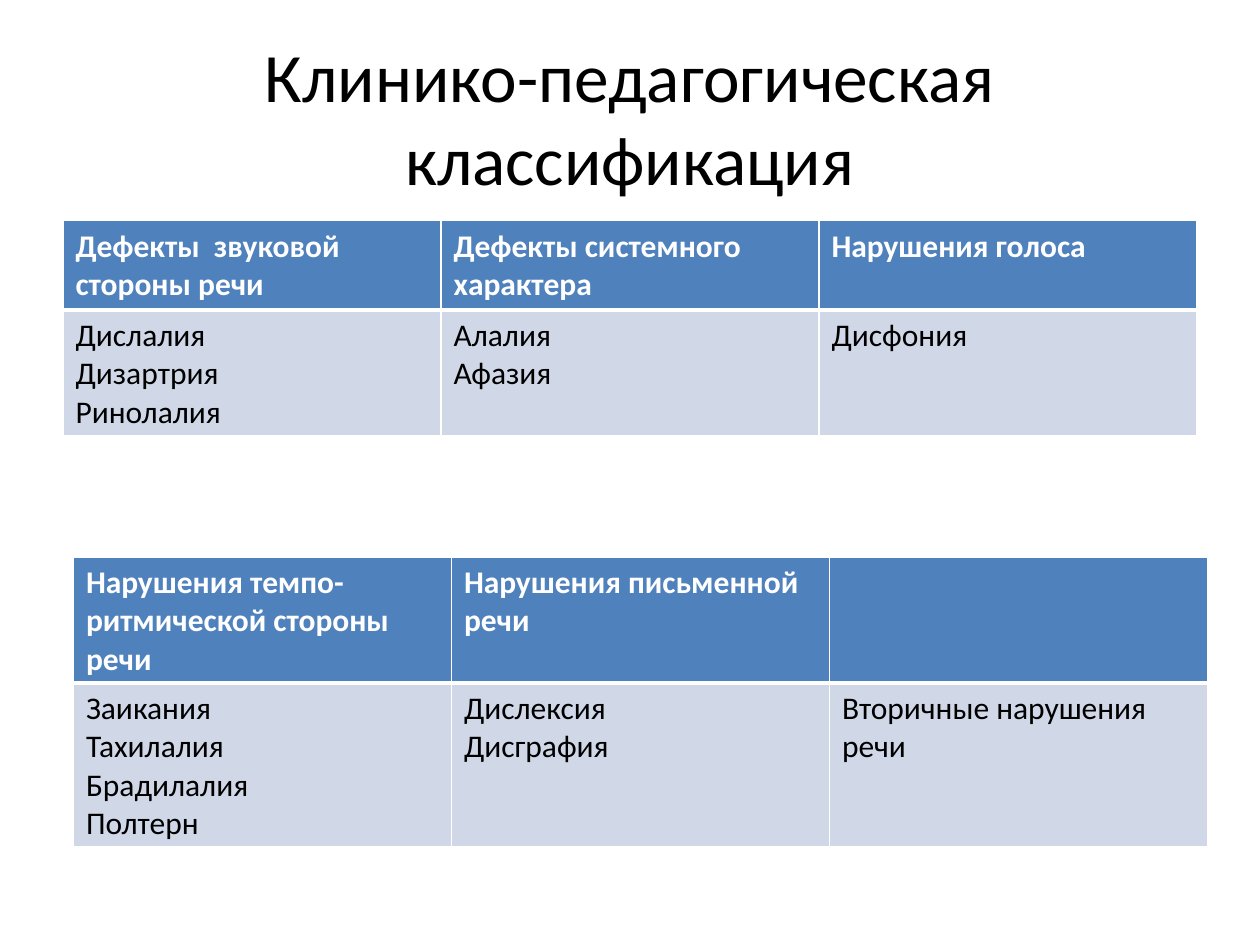
from lxml import etree
from pptx import Presentation
from pptx.dml.color import RGBColor
from pptx.enum import text
from pptx.oxml import ns
from pptx.util import Cm, Pt

FONT = "Calibri"
WHITE, BLACK = "FFFFFF", "000000"
HEADER_FILL, BODY_FILL = "4F81BD", "D0D8E8"
TITLE = "Клинико-педагогическая классификация"
COLUMN_WIDTH = 7.62
TABLES = [
    {
        "left": 1.27, "top": 4.45, "heights": (1.8, 2.54),
        "columns": [
            ("Дефекты  звуковой стороны речи", ["Дислалия", "Дизартрия", "Ринолалия"]),
            ("Дефекты системного характера", ["Алалия", "Афазия"]),
            ("Нарушения голоса", ["Дисфония"]),
        ],
    },
    {
        "left": 1.48, "top": 11.23, "heights": (2.54, 3.3),
        "columns": [
            ("Нарушения темпо-ритмической стороны речи",
             ["Заикания", "Тахилалия", "Брадилалия", "Полтерн"]),
            ("Нарушения письменной речи", ["Дислексия", "Дисграфия"]),
            ("", ["Вторичные нарушения речи"]),
        ],
    },
]


def color(value):
    return RGBColor.from_string(value)


def style(paragraph, size, font_color, bold=False):
    paragraph.font.name = FONT
    paragraph.font.size = Pt(size)
    paragraph.font.bold = bold
    paragraph.font.color.rgb = color(font_color)


def add_borders(cell, widths):
    properties = cell._tc.get_or_add_tcPr()
    for index, (side, width) in enumerate(widths.items()):
        line = etree.Element(ns.qn(f"a:ln{side}"), w=str(Pt(width)))
        fill = etree.SubElement(line, ns.qn("a:solidFill"))
        etree.SubElement(fill, ns.qn("a:srgbClr"), val=WHITE)
        properties.insert(index, line)


def fill_cell(cell, lines, is_header):
    cell.text = "\n".join(lines)
    for paragraph in cell.text_frame.paragraphs:
        style(paragraph, 18, WHITE if is_header else BLACK, is_header)
    cell.fill.solid()
    cell.fill.fore_color.rgb = color(HEADER_FILL if is_header else BODY_FILL)
    top, bottom = (1, 3) if is_header else (3, 1)
    add_borders(cell, {"L": 1, "R": 1, "T": top, "B": bottom})


def add_title(slide):
    shape = slide.shapes.add_textbox(Cm(1.27), Cm(0.76), Cm(22.86), Cm(3.18))
    frame = shape.text_frame
    frame.word_wrap = True
    frame.vertical_anchor = text.MSO_ANCHOR.MIDDLE
    frame.text = TITLE
    paragraph = frame.paragraphs[0]
    paragraph.alignment = text.PP_ALIGN.CENTER
    style(paragraph, 39.6, BLACK)


def add_classification(slide, left, top, heights, columns):
    table = slide.shapes.add_table(
        len(heights), len(columns), Cm(left), Cm(top),
        Cm(COLUMN_WIDTH * len(columns)), Cm(sum(heights))).table
    for row, height in zip(table.rows, heights):
        row.height = Cm(height)
    for index, (heading, disorders) in enumerate(columns):
        table.columns[index].width = Cm(COLUMN_WIDTH)
        fill_cell(table.cell(0, index), [heading], True)
        fill_cell(table.cell(1, index), disorders, False)


def main():
    presentation = Presentation()
    presentation.slide_width, presentation.slide_height = Cm(25.4), Cm(19.05)
    slide = presentation.slides.add_slide(presentation.slide_layouts[6])
    add_title(slide)
    for table in TABLES:
        add_classification(slide, **table)
    presentation.save("out.pptx")


if __name__ == "__main__":
    main()
